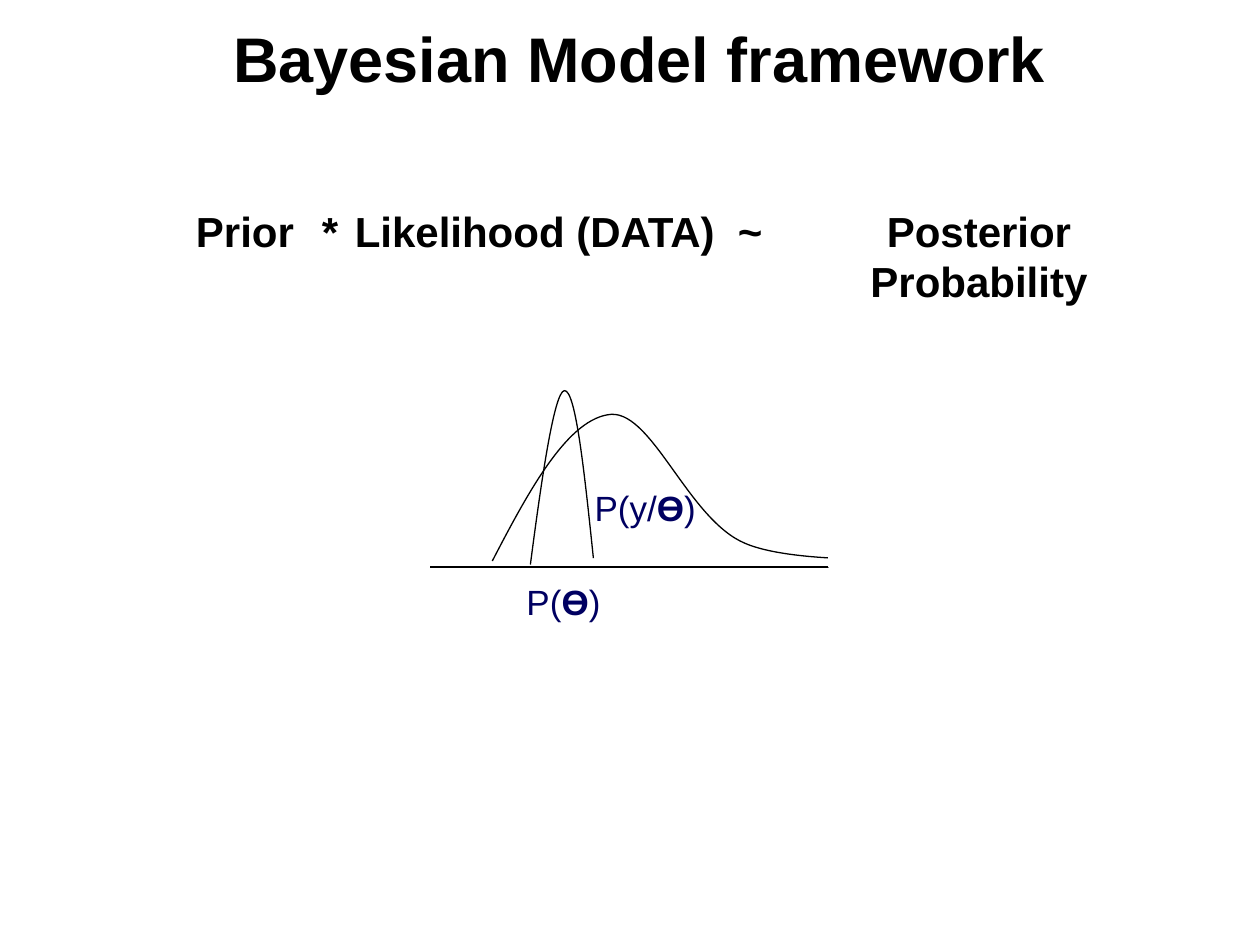
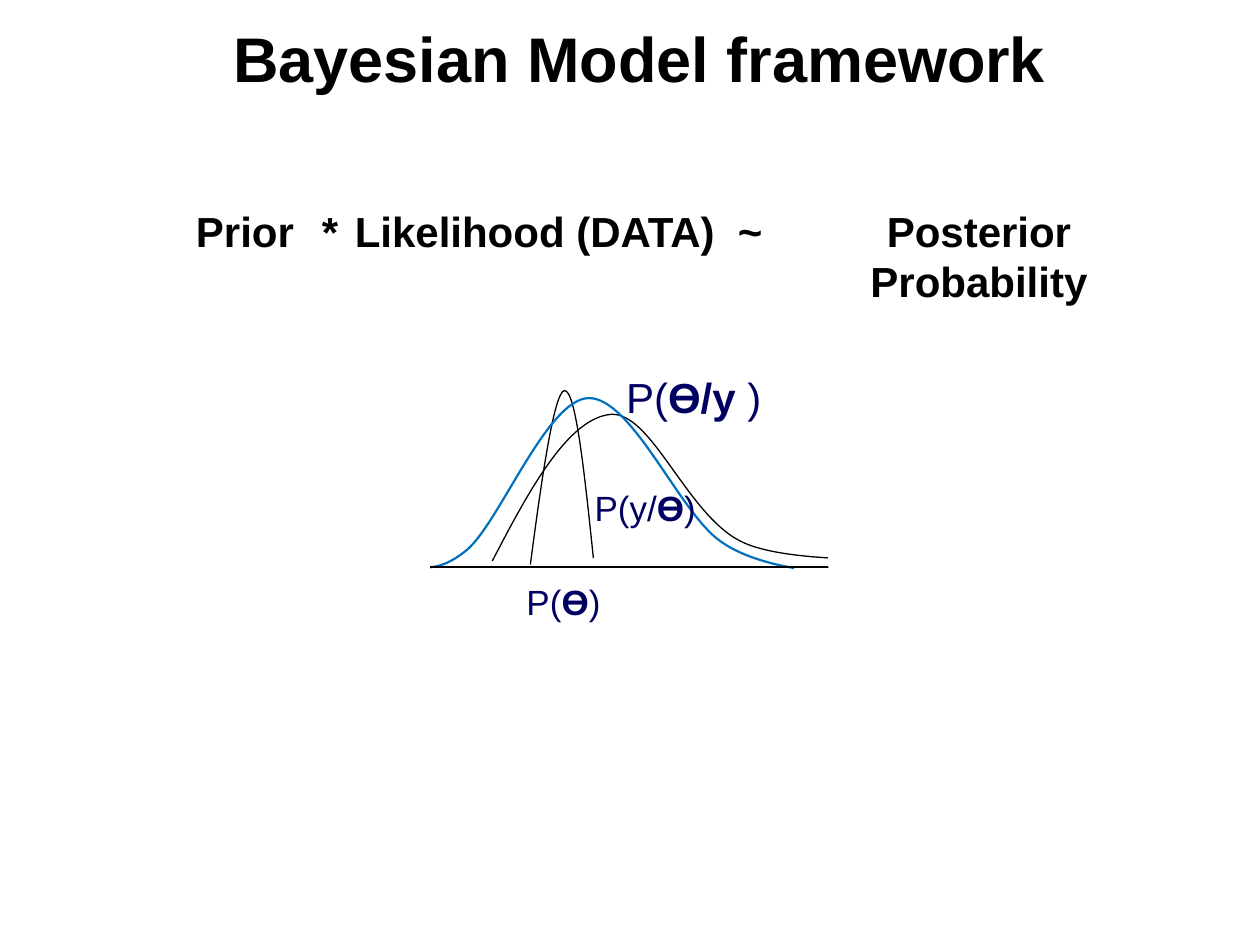
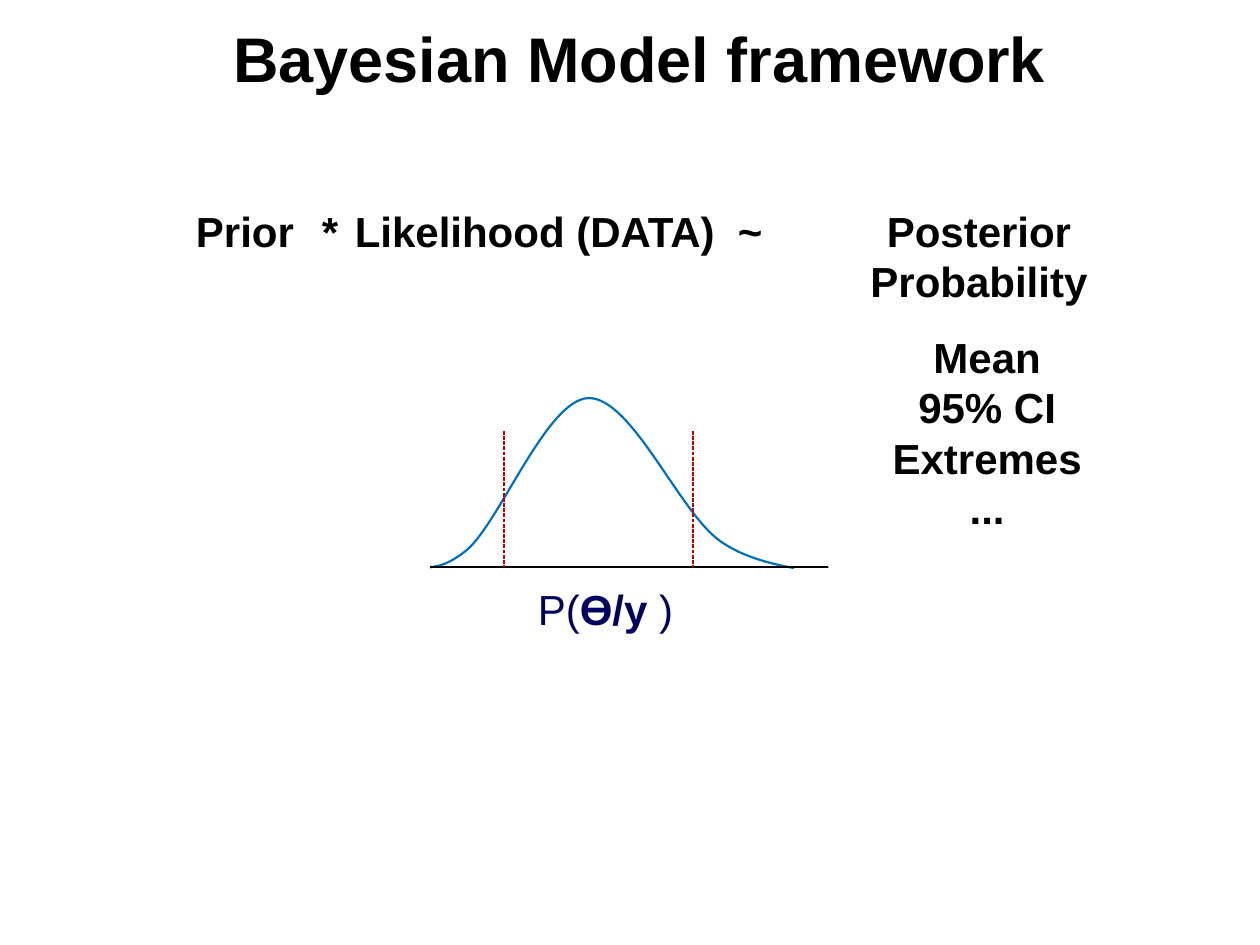
import pptx
import pptx.util
import pptx.dml.color
import pptx.enum.dml
import pptx.enum.shapes
import pptx.enum.text
import pptx.oxml.ns
import lxml.etree

PX = 9144
FONT = "Arial"
HUES = {"ink": "000000", "navy": "000061", "blue": "0070C0", "red": "C00000", "white": "FFFFFF"}
ALIGN = pptx.enum.text.PP_ALIGN
HEAD = {"size": 24, "bold": True, "hue": "ink", "align": ALIGN.CENTER}
TITLE = {**HEAD, "size": 36}
TERM = {"size": 24, "bold": False, "hue": "navy", "align": ALIGN.LEFT}
SMALL = {**TERM, "size": 20}

PRIOR = [(421, 448), (430, 379), (440, 311), (448, 310), (457, 309), (464, 376), (471, 443)]
LIKELY = [(387, 432), (421, 377), (456, 323), (490, 323), (523, 324), (545, 411), (588, 433),
          (630, 455), (745, 456), (745, 456), (745, 456)]
POST = [(312, 442), (328, 450), (344, 458), (370, 437), (396, 416), (434, 317), (467, 316),
        (501, 315), (539, 406), (571, 429), (602, 452), (658, 454), (658, 454), (658, 454)]
MASKS = [(283, 433, 58, 25), (658, 425, 92, 25), (631, 451, 50, 17)]


def emu(*sizes):
    return [pptx.util.Emu(size * PX) for size in sizes]


def tint(hue):
    return pptx.dml.color.RGBColor.from_string(HUES[hue])


def stroke(line, hue, width):
    line.color.rgb = tint(hue)
    line.width = pptx.util.Pt(width)


def text(host, spot, lines, form, wrap=True):
    frame = host.shapes.add_textbox(*emu(*spot)).text_frame
    frame.word_wrap = wrap
    frame.auto_size = pptx.enum.text.MSO_AUTO_SIZE.SHAPE_TO_FIT_TEXT
    for i, runs in enumerate(lines):
        para = frame.paragraphs[0] if i == 0 else frame.add_paragraph()
        para.alignment = form["align"]
        for words, bold in runs:
            run = para.add_run()
            run.text = words
            looks = {"name": FONT, "size": pptx.util.Pt(form["size"]), "bold": bold or form["bold"]}
            for key, value in looks.items():
                setattr(run.font, key, value)
            run.font.color.rgb = tint(form["hue"])


def plain(host, spot, words, form, wrap=True):
    text(host, spot, [[(line, False)] for line in words], form, wrap)


def term(host, spot, parts, form):
    text(host, spot, [[(part, i == 1) for i, part in enumerate(parts)]], form, False)


def bend(shape):
    lines = list(shape._element.iter(pptx.oxml.ns.qn("a:lnTo")))
    for i in range(0, len(lines) - 2, 3):
        first, *rest = lines[i:i + 3]
        first.tag = pptx.oxml.ns.qn("a:cubicBezTo")
        for line in rest:
            first.append(line[0])
            line.getparent().remove(line)


def curve(host, knots, hue="ink", width=0.75, turn=0):
    pen = host.shapes.build_freeform(*emu(*knots[0]))
    pen.add_line_segments([emu(*knot) for knot in knots[1:]], close=False)
    shape = pen.convert_to_shape()
    bend(shape)
    shape.rotation = turn
    shape.shadow.inherit = False
    shape.fill.background()
    stroke(shape.line, hue, width)


def rule(host, ends, hue, width, dash=None):
    link = host.shapes.add_connector(pptx.enum.shapes.MSO_CONNECTOR.STRAIGHT, *emu(*ends))
    stroke(link.line, hue, width)
    if dash:
        link.line.dash_style = dash
    lxml.etree.SubElement(link._element.spPr, pptx.oxml.ns.qn("a:effectLst"))


def mask(host, spot):
    shape = host.shapes.add_shape(pptx.enum.shapes.MSO_SHAPE.RECTANGLE, *emu(*spot))
    shape.shadow.inherit = False
    shape.fill.solid()
    shape.fill.fore_color.rgb = tint("white")
    stroke(shape.line, "white", 0.75)


def start(deck):
    slide = deck.slides.add_slide(deck.slide_layouts[6])
    plain(slide, (115, 11, 785, 70), ["Bayesian Model framework"], TITLE)
    plain(slide, (617, 158, 320, 50), ["Posterior Probability"], HEAD)
    plain(slide, (125, 158, 174, 50), ["Prior\t*"], HEAD)
    plain(slide, (270, 158, 347, 50), ["Likelihood (DATA)  ~"], HEAD, False)
    return slide


def graph(host, curves, terms):
    for form in curves:
        curve(host, **form)
    rule(host, (296, 450, 696, 450), "ink", 1.5)
    for spot, parts, form in terms:
        term(host, spot, parts, form)
    for spot in MASKS:
        mask(host, spot)


def main():
    deck = pptx.Presentation()
    deck.slide_width, deck.slide_height = emu(1000, 750)

    pair = [{"knots": PRIOR}, {"knots": LIKELY, "turn": 355.7}]
    blue = [{"knots": POST, "hue": "blue", "width": 1.25}]
    given = [((408, 456, 79, 44), ("P(", "ϴ", ")"), SMALL),
             ((462, 381, 101, 44), ("P(y/", "ϴ", ")"), SMALL)]
    goal = ("P(", "ϴ/y", " )")

    graph(start(deck), pair, given)

    group = start(deck).shapes.add_group_shape()
    graph(group, pair + blue, [((487, 290, 129, 50), goal, TERM)] + given)

    last = start(deck)
    graph(last, blue, [((417, 458, 129, 50), goal, TERM)])
    for x in (400, 550):
        rule(last, (x, 342, x, 450), "red", 0.75, pptx.enum.dml.MSO_LINE.SQUARE_DOT)
    plain(last, (600, 258, 367, 212), ["Mean", "95% CI", "Extremes", "..."], HEAD)

    deck.save("out.pptx")


if __name__ == "__main__":
    main()
